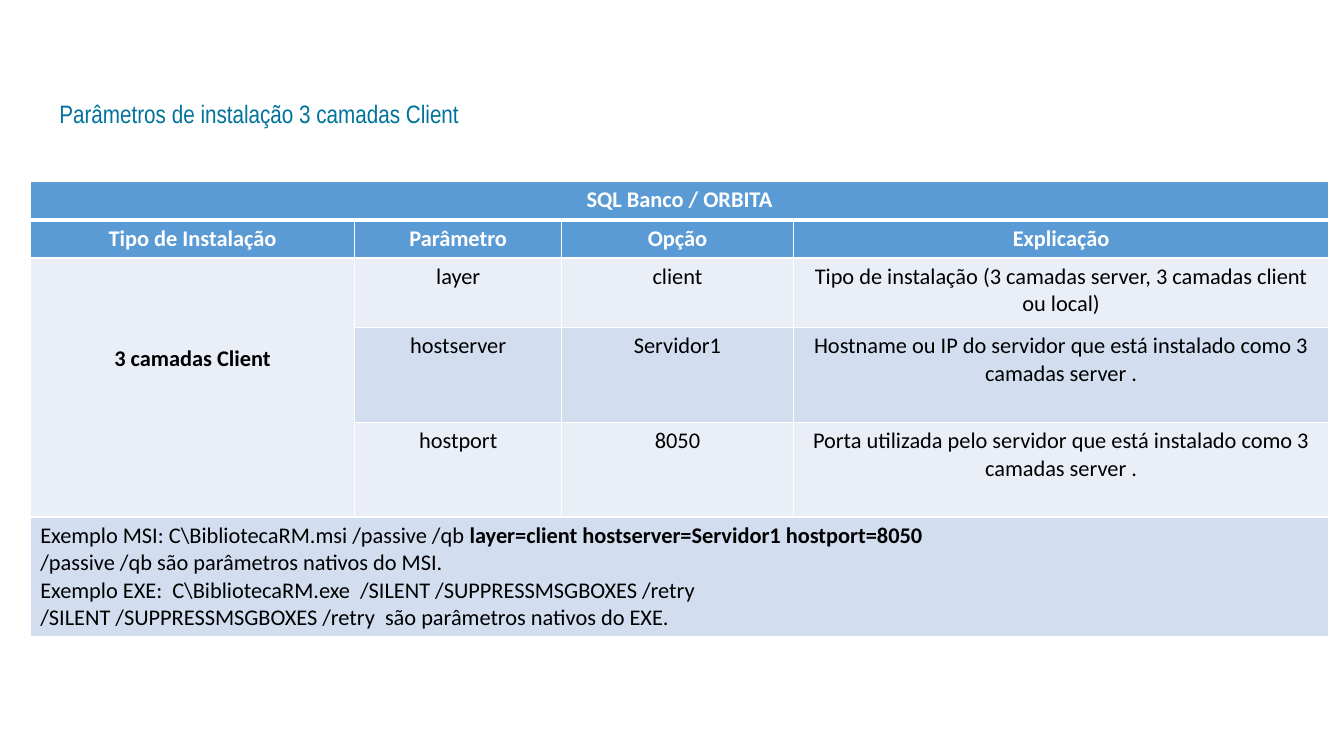
import pptx
import pptx.util
import pptx.dml.color
import pptx.enum.text
import pptx.oxml
import pptx.oxml.ns

Inches = pptx.util.Inches
Pt = pptx.util.Pt
ALIGN = pptx.enum.text.PP_ALIGN

# Content
TITLE = "Parâmetros de instalação 3 camadas Client"
DATABASES = "SQL Banco / ORBITA"
HEADINGS = ["Tipo de Instalação", "Parâmetro", "Opção", "Explicação"]
INSTALL_TYPE = "3 camadas Client"
PARAMETERS = [
    ("layer", "client",
     "Tipo de instalação (3 camadas server, 3 camadas client ou local)"),
    ("hostserver", "Servidor1",
     "Hostname ou IP do servidor que está instalado como 3 camadas server ."),
    ("hostport", "8050",
     "Porta utilizada pelo servidor que está instalado como 3 camadas server ."),
]
# Each example line is a list of (text, bold)
EXAMPLES = [
    [("Exemplo MSI: C\\BibliotecaRM.msi /passive /qb ", False),
     ("layer=client hostserver=Servidor1 hostport=8050", True)],
    [("/passive /qb são parâmetros nativos do MSI.", False)],
    [("Exemplo EXE:  C\\BibliotecaRM.exe  /SILENT /SUPPRESSMSGBOXES /retry", False)],
    [("/SILENT /SUPPRESSMSGBOXES /retry  são parâmetros nativos do EXE.", False)],
]

# Format
COLORS = {"title": "00739C", "header": "5B9BD5", "light": "EAEFF7",
          "dark": "D2DEEF", "white": "FFFFFF", "black": "000000"}
COLUMN_WIDTHS = [3.22, 2.05, 2.3, 5.31]
ROW_HEIGHTS = [0.38, 0.38, 0.69, 0.94, 0.94, 1.19]
ROW_FILLS = ["header", "header", "light", "dark", "light", "dark"]
FIRST_PARAMETER, LAST_PARAMETER, EXAMPLE_ROW = 2, 4, 5
LAST_COLUMN = len(COLUMN_WIDTHS) - 1
TITLE_FONT = {"name": "Arial Narrow", "size": Pt(18)}
TABLE_FONT = {"name": "Calibri", "size": Pt(16)}


def rgb(name):
    return pptx.dml.color.RGBColor.from_string(COLORS[name])


def add_run(paragraph, text, color, **font_format):
    run = paragraph.add_run()
    run.text = text
    for attribute, value in font_format.items():
        setattr(run.font, attribute, value)
    run.font.color.rgb = rgb(color)


def write_cell(cell, lines, color="black", align=ALIGN.CENTER):
    for index, line in enumerate(lines):
        frame = cell.text_frame
        paragraph = frame.add_paragraph() if index else frame.paragraphs[0]
        paragraph.alignment = align
        for text, bold in line:
            add_run(paragraph, text, color, bold=bold, **TABLE_FONT)


def set_borders(cell, row):
    # A thick line parts the first row from the second
    widths = {"L": 1, "R": 1, "T": 3 if row == 1 else 1, "B": 3 if row == 0 else 1}
    properties = cell._tc.get_or_add_tcPr()
    for side, width in widths.items():
        properties.append(pptx.oxml.parse_xml(
            f'<a:ln{side} {pptx.oxml.ns.nsdecls("a")} w="{Pt(width)}"><a:solidFill>'
            f'<a:srgbClr val="{COLORS["white"]}"/></a:solidFill></a:ln{side}>'))


def main():
    deck = pptx.Presentation()
    deck.slide_width, deck.slide_height = Inches(13.33), Inches(7.5)
    slide = deck.slides.add_slide(deck.slide_layouts[6])

    # Title
    title = slide.shapes.add_textbox(
        Inches(0.49), Inches(0.96), Inches(5.02), Inches(0.47)).text_frame
    title.word_wrap = True
    title.paragraphs[0].line_spacing = 0.9
    add_run(title.paragraphs[0], TITLE, "title", **TITLE_FONT)

    # Table grid
    table = slide.shapes.add_table(
        len(ROW_HEIGHTS), len(COLUMN_WIDTHS), Inches(0.3), Inches(1.8),
        Inches(sum(COLUMN_WIDTHS)), Inches(sum(ROW_HEIGHTS))).table
    for column, width in zip(table.columns, COLUMN_WIDTHS):
        column.width = Inches(width)
    for row, (height, fill) in enumerate(zip(ROW_HEIGHTS, ROW_FILLS)):
        table.rows[row].height = Inches(height)
        for cell in table.rows[row].cells:
            set_borders(cell, row)
            cell.fill.solid()
            cell.fill.fore_color.rgb = rgb(fill)

    # Merged cells
    table.cell(0, 0).merge(table.cell(0, LAST_COLUMN))
    table.cell(FIRST_PARAMETER, 0).merge(table.cell(LAST_PARAMETER, 0))
    table.cell(EXAMPLE_ROW, 0).merge(table.cell(EXAMPLE_ROW, LAST_COLUMN))

    # Headings
    write_cell(table.cell(0, 0), [[(DATABASES, True)]], "white")
    for column, heading in enumerate(HEADINGS):
        write_cell(table.cell(1, column), [[(heading, True)]], "white")

    # Parameters
    install_type = table.cell(FIRST_PARAMETER, 0)
    install_type.margin_top = Inches(0.86)
    write_cell(install_type, [[(INSTALL_TYPE, True)]])
    for row, parameter in enumerate(PARAMETERS, FIRST_PARAMETER):
        for column, text in enumerate(parameter, 1):
            write_cell(table.cell(row, column), [[(text, False)]])

    # Command examples
    write_cell(table.cell(EXAMPLE_ROW, 0), EXAMPLES, align=ALIGN.LEFT)

    deck.save("out.pptx")


if __name__ == "__main__":
    main()
